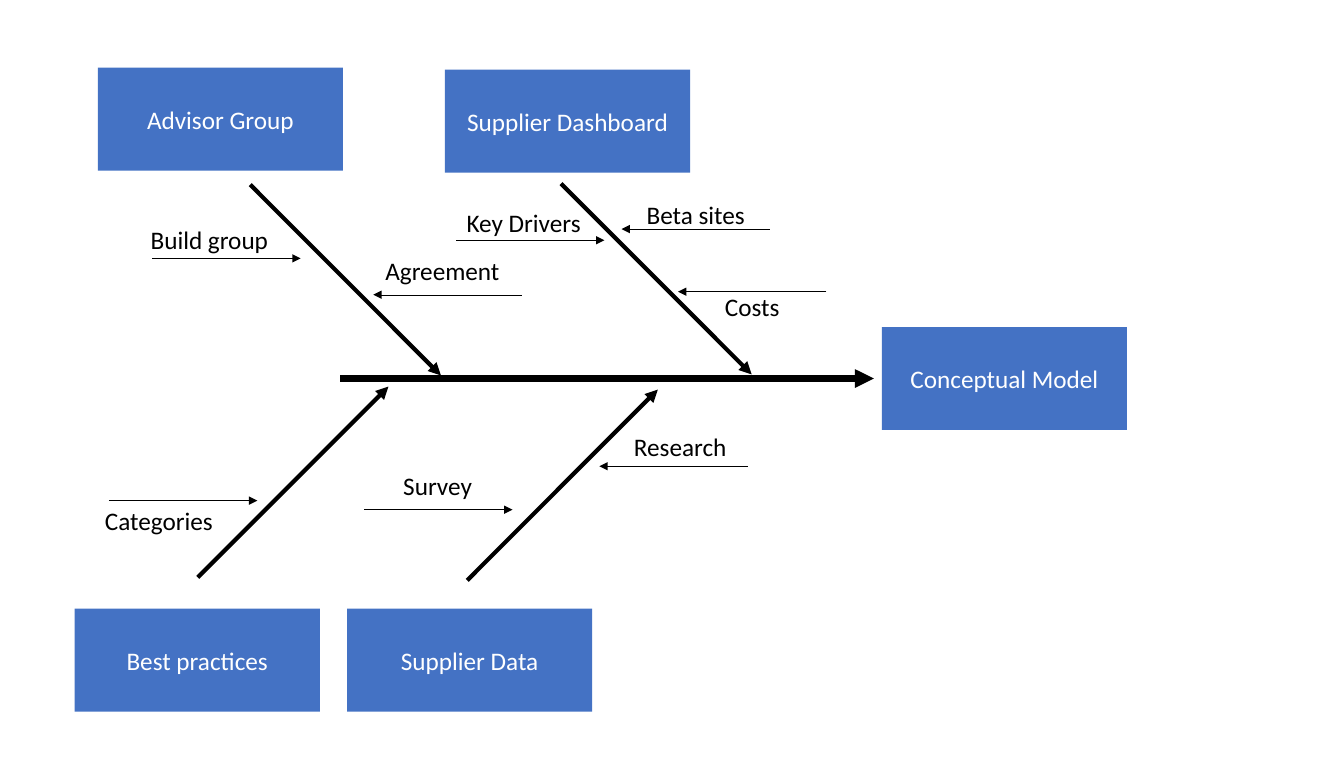
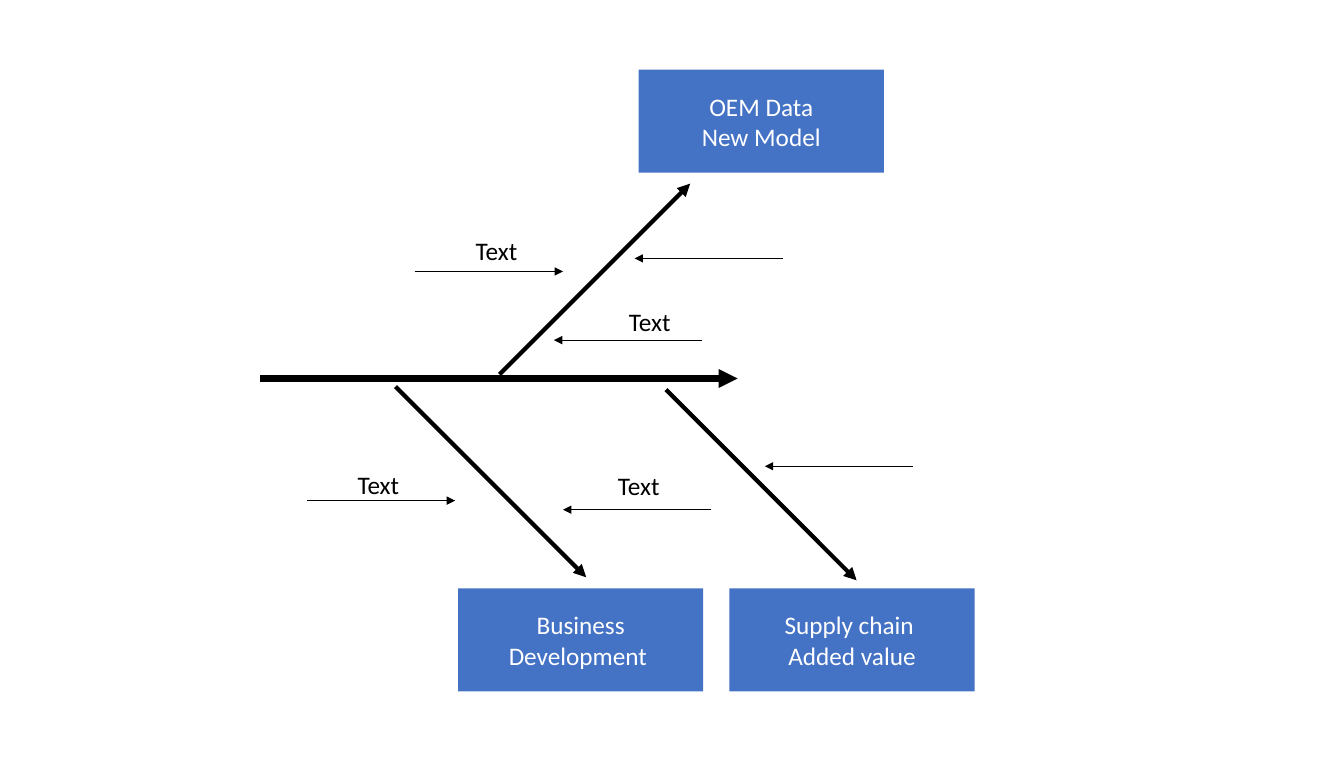
import dataclasses
import typing

import lxml.etree
import pptx
import pptx.dml.color
import pptx.enum.shapes
import pptx.enum.text
import pptx.oxml.ns
import pptx.util

EMU_PER_PX = 9144  # 100 px to the inch
SLIDE_WIDTH, SLIDE_HEIGHT = 1332, 750
BOX_WIDTH, BOX_HEIGHT = 243, 102
LABEL_HEIGHT = 40
SPINE_Y = 375
BONE_RUN = 189
TWIG_LENGTH = 147
RIGHT, LEFT = 1, -1
DOWN, UP = 1, -1


@dataclasses.dataclass(frozen=True)
class Theme:
    font: str = "Calibri"
    text_pt: int = 18
    box_fill: str = "4472C4"
    box_text: str = "FFFFFF"
    ink: str = "000000"
    spine_pt: float = 4.5
    bone_pt: float = 3
    twig_pt: float = 0.5
    fine_twig_pt: float = 0.25


THEME = Theme()


class Box(typing.NamedTuple):
    left: int
    top: int
    lines: tuple[str, ...]


class Bone(typing.NamedTuple):
    """A 45 degree arrow, given by its start and its directions."""
    x: int
    y: int
    across: int
    down: int


class Twig(typing.NamedTuple):
    """A short level arrow, given by its tip."""
    tip: int
    y: int
    heading: int
    weight: float = THEME.twig_pt


class Label(typing.NamedTuple):
    left: int
    top: int
    width: int
    text: str


@dataclasses.dataclass(frozen=True)
class Fishbone:
    spine: tuple[int, int]
    bones: tuple[Bone, ...]
    boxes: tuple[Box, ...]
    twigs: tuple[Twig, ...]
    labels: tuple[Label, ...]


FINE = THEME.fine_twig_pt

CONCEPTUAL_MODEL = Fishbone(
    spine=(337, 866),
    bones=(
        Bone(556, 182, RIGHT, DOWN),
        Bone(248, 183, RIGHT, DOWN),
        Bone(463, 575, RIGHT, UP),
        Bone(196, 572, RIGHT, UP),
    ),
    boxes=(
        Box(874, 324, ("Conceptual Model",)),
        Box(441, 69, ("Supplier Dashboard",)),
        Box(344, 603, ("Supplier Data",)),
        Box(97, 67, ("Advisor Group",)),
        Box(74, 603, ("Best practices",)),
    ),
    twigs=(
        Twig(599, 238, RIGHT),
        Twig(508, 505, RIGHT),
        Twig(298, 256, RIGHT),
        Twig(255, 496, RIGHT),
        Twig(616, 227, LEFT, FINE),
        Twig(672, 289, LEFT, FINE),
        Twig(594, 462, LEFT, FINE),
        Twig(370, 292, LEFT, FINE),
    ),
    labels=(
        Label(138, 217, 139, "Build group"),
        Label(371, 248, 135, "Agreement"),
        Label(93, 496, 129, "Categories"),
        Label(389, 461, 95, "Survey "),
        Label(451, 200, 136, "Key Drivers"),
        Label(708, 284, 75, "Costs"),
        Label(630, 193, 119, "Beta sites"),
        Label(617, 422, 120, "Research "),
    ),
)

NEW_MODEL = Fishbone(
    spine=(258, 731),
    bones=(
        Bone(495, 371, RIGHT, UP),
        Bone(660, 386, RIGHT, DOWN),
        Bone(392, 383, RIGHT, DOWN),
    ),
    boxes=(
        Box(633, 69, ("OEM Data", "New Model")),
        Box(723, 583, ("Supply chain ", "Added value")),
        Box(454, 583, ("Business Development ",)),
    ),
    twigs=(
        Twig(629, 256, LEFT),
        Twig(558, 505, LEFT),
        Twig(451, 496, RIGHT),
        Twig(758, 462, LEFT, FINE),
        Twig(549, 337, LEFT, FINE),
        Twig(558, 269, RIGHT, FINE),
    ),
    labels=tuple(
        Label(left, top, 64, "Text")
        for left, top in ((460, 228), (612, 299), (343, 460), (601, 461))
    ),
)


def px(length: int) -> pptx.util.Emu:
    return pptx.util.Emu(length * EMU_PER_PX)


def rgb(colour: str) -> pptx.dml.color.RGBColor:
    return pptx.dml.color.RGBColor.from_string(colour)


def write(frame, lines: tuple[str, ...], colour: str) -> None:
    """Fill a text frame with centred paragraphs."""
    frame.text = "\n".join(lines)
    for paragraph in frame.paragraphs:
        paragraph.alignment = pptx.enum.text.PP_ALIGN.CENTER
        paragraph.font.name = THEME.font
        paragraph.font.size = pptx.util.Pt(THEME.text_pt)
        paragraph.font.color.rgb = rgb(colour)


def draw_arrow(slide, start: tuple[int, int], tip: tuple[int, int],
               weight: float) -> None:
    arrow = slide.shapes.add_connector(
        pptx.enum.shapes.MSO_CONNECTOR.STRAIGHT,
        *map(px, start), *map(px, tip))
    arrow.line.color.rgb = rgb(THEME.ink)
    arrow.line.width = pptx.util.Pt(weight)
    qn = pptx.oxml.ns.qn
    properties = arrow._element.spPr
    outline = properties.find(qn("a:ln"))
    lxml.etree.SubElement(outline, qn("a:tailEnd"), type="triangle")
    lxml.etree.SubElement(properties, qn("a:effectLst"))


def draw_box(slide, box: Box) -> None:
    shape = slide.shapes.add_shape(
        pptx.enum.shapes.MSO_SHAPE.RECTANGLE,
        px(box.left), px(box.top), px(BOX_WIDTH), px(BOX_HEIGHT))
    shape.shadow.inherit = False
    shape.fill.solid()
    shape.fill.fore_color.rgb = rgb(THEME.box_fill)
    shape.line.fill.background()
    shape.text_frame.vertical_anchor = pptx.enum.text.MSO_ANCHOR.MIDDLE
    write(shape.text_frame, box.lines, THEME.box_text)


def draw_label(slide, label: Label) -> None:
    frame = slide.shapes.add_textbox(
        px(label.left), px(label.top),
        px(label.width), px(LABEL_HEIGHT)).text_frame
    frame.word_wrap = False
    frame.auto_size = pptx.enum.text.MSO_AUTO_SIZE.SHAPE_TO_FIT_TEXT
    write(frame, (label.text,), THEME.ink)


def draw_fishbone(slide, fishbone: Fishbone) -> None:
    tail, head = fishbone.spine
    draw_arrow(slide, (tail, SPINE_Y), (head, SPINE_Y), THEME.spine_pt)
    for bone in fishbone.bones:
        tip = (bone.x + bone.across * BONE_RUN, bone.y + bone.down * BONE_RUN)
        draw_arrow(slide, (bone.x, bone.y), tip, THEME.bone_pt)
    for box in fishbone.boxes:
        draw_box(slide, box)
    for twig in fishbone.twigs:
        start = (twig.tip - twig.heading * TWIG_LENGTH, twig.y)
        draw_arrow(slide, start, (twig.tip, twig.y), twig.weight)
    for label in fishbone.labels:
        draw_label(slide, label)


def main() -> None:
    presentation = pptx.Presentation()
    presentation.slide_width = px(SLIDE_WIDTH)
    presentation.slide_height = px(SLIDE_HEIGHT)
    blank = presentation.slide_layouts.get_by_name("Blank")
    for fishbone in (CONCEPTUAL_MODEL, NEW_MODEL):
        draw_fishbone(presentation.slides.add_slide(blank), fishbone)
    presentation.save("out.pptx")


if __name__ == "__main__":
    main()
